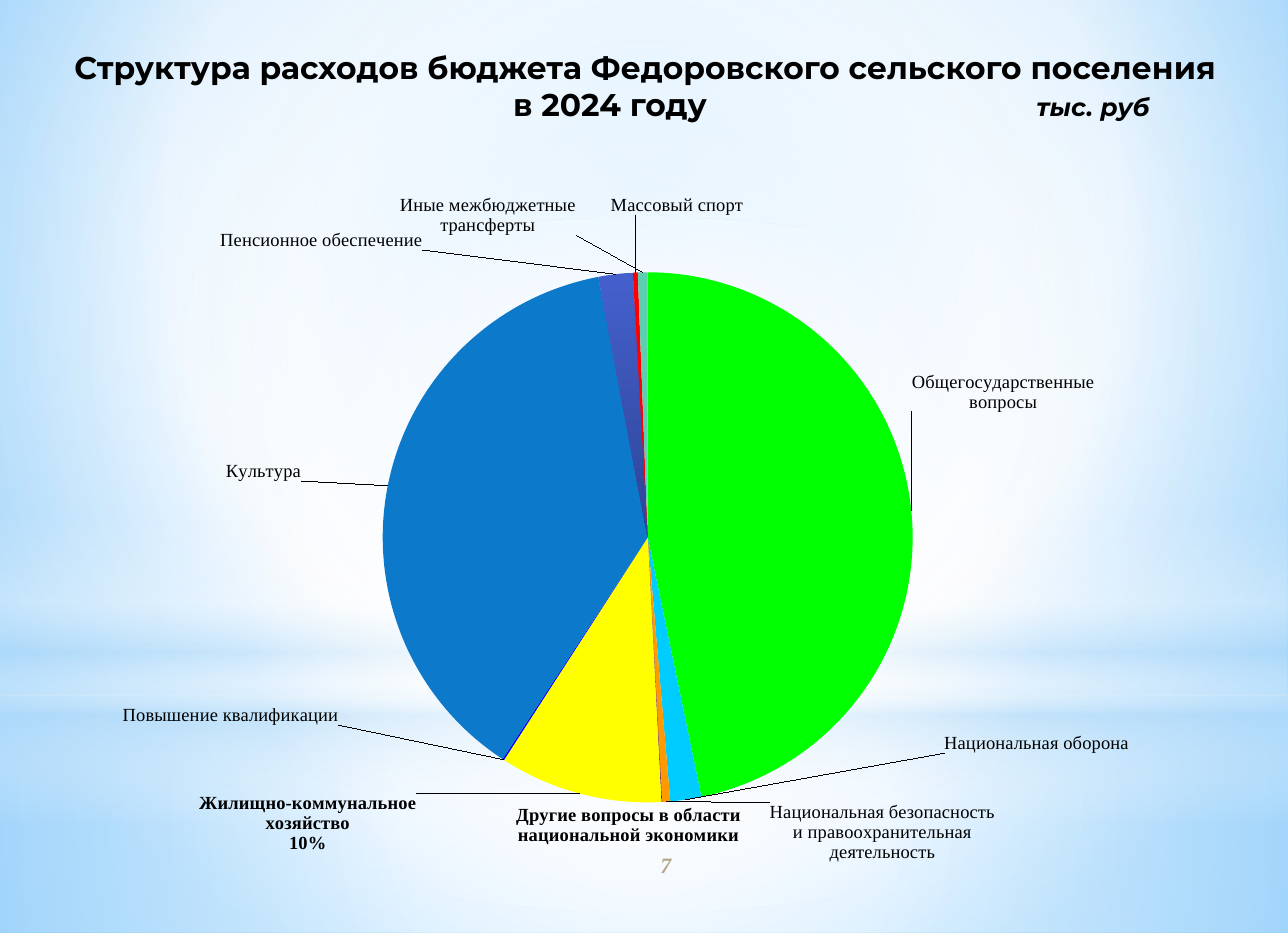
from dataclasses import dataclass
from math import cos, pi, sin
from lxml.etree import SubElement
from pptx import Presentation
from pptx.chart.data import CategoryChartData
from pptx.dml.color import RGBColor
from pptx.enum.chart import XL_CHART_TYPE
from pptx.enum.shapes import MSO_SHAPE
from pptx.enum.text import MSO_ANCHOR, PP_ALIGN
from pptx.oxml.ns import qn
from pptx.util import Inches, Pt


@dataclass(frozen=True)
class Theme:
    black: str = "000000"
    sand: str = "B5A788"
    white: str = "FFFFFF"
    sky: str = "B4DCFA"
    head: str = "Montserrat"
    body: str = "Times New Roman"
    title: int = 20
    unit: int = 16
    page: int = 14
    label: float = 11.8


T = Theme()
WIDE, HIGH = 11.42, 8.27
CENTER = (50, 50, 50, 50)
ROW = 2.2

ITEMS = [
    ("Общегосударственные вопросы", 47, "00FF00", (77.4, 42, 14.2, 2)),
    ("Национальная оборона", 1.9, "00CCFF", (80.4, 79, 14.3, 1)),
    ("Национальная безопасность и правоохранительная деятельность", 0.5, "FF9900",
     (68.5, 88.6, 17.5, 3)),
    ("Другие вопросы в области национальной экономики", 0.04, "660066", (48.8, 87.8, 17.5, 2)),
    ("Жилищно-коммунальное хозяйство", 10, "FFFF00", (24.1, 87.6, 16.8, 3)),
    ("Повышение квалификации", 0.1, "0000FF", (18.2, 76.1, 16.8, 1)),
    ("Культура", 38, "0D79CA", (21, 50.6, 5.8, 1)),
    ("Пенсионное обеспечение", 2.1, ("4560CC", "2D4496"), (25, 26.4, 15.8, 1)),
    ("Массовый спорт", 0.3, "FF0000", (52.6, 22.7, 10.3, 1)),
    ("Иные межбюджетные трансферты", 0.6, "5DCEAF", (37.9, 23.7, 13.7, 2)),
]
STRONG = (3, 4)
SHARED = 4


def place(box):
    x, y, w, h = box
    return [Inches(v * side / 100) for v, side in ((x, WIDE), (y, HIGH), (w, WIDE), (h, HIGH))]


def blend(root, stops, focus=None):
    grad = root.find(".//" + qn("a:gradFill"))
    for child in list(grad):
        grad.remove(child)
    row = SubElement(grad, qn("a:gsLst"))
    for pos, color, alpha in stops:
        stop = SubElement(row, qn("a:gs"), pos=str(pos * 1000))
        tint = SubElement(stop, qn("a:srgbClr"), val=color)
        if alpha < 100:
            SubElement(tint, qn("a:alpha"), val=str(alpha * 1000))
    if focus:
        way = SubElement(grad, qn("a:path"), {"path": "circle"})
        edges = {side: str(v * 1000) for side, v in zip("ltrb", focus)}
        SubElement(way, qn("a:fillToRect"), edges)
    else:
        SubElement(grad, qn("a:lin"), ang="5400000", scaled="0")


def write(para, text, size, font, color=T.black, italic=False):
    run = para.add_run()
    run.text = text
    run.font.size = Pt(size)
    run.font.name = font
    run.font.bold = True
    run.font.italic = italic
    run.font.color.rgb = RGBColor.from_string(color)


def frame(slide, box):
    text = slide.shapes.add_textbox(*place(box)).text_frame
    text.word_wrap = True
    text.margin_left = text.margin_right = Inches(0.11)
    text.margin_top = text.margin_bottom = Inches(0.06)
    return text


def backdrop(slide):
    slide.background.fill.gradient()
    blend(slide.background._cSld, [(0, "9ED5FF", 100), (60, T.white, 100), (100, "5BB9FF", 100)],
          (20, 10, 20, 60))
    rect, oval = MSO_SHAPE.RECTANGLE, MSO_SHAPE.OVAL
    layers = [
        (rect, (0, 74.5, 100, 25.5),
         [(0, T.white, 91), (37, T.white, 76), (100, T.sky, 79)], CENTER),
        (rect, (0, 0, 100, 74.5),
         [(0, T.white, 89), (48, T.white, 62), (100, T.sky, 79)], CENTER),
        (rect, (0, 54.9, 100, 33.4),
         [(0, T.white, 0), (29, T.white, 30), (45, T.sky, 40), (55, T.white, 26),
          (65, T.sky, 60), (100, T.white, 0)], None),
        (oval, (0, 23.3, 100, 74.5), [(0, T.white, 100), (56, T.white, 0)], CENTER),
    ]
    for kind, box, stops, focus in layers:
        shape = slide.shapes.add_shape(kind, *place(box))
        shape.shadow.inherit = False
        shape.line.fill.background()
        shape.fill.gradient()
        blend(shape._element.spPr, stops, focus)


def heading(slide, box):
    text = frame(slide, box)
    top = text.paragraphs[0]
    top.alignment = PP_ALIGN.CENTER
    write(top, "Структура расходов бюджета Федоровского сельского поселения", T.title, T.head)
    low = text.add_paragraph()
    low.alignment = PP_ALIGN.LEFT
    tabs = SubElement(low._p.get_or_add_pPr(), qn("a:tabLst"))
    for share, kind in ((44.2, "ctr"), (77.3, "l")):
        SubElement(tabs, qn("a:tab"), pos=str(Inches(share * WIDE / 100)), algn=kind)
    write(low, "\tв 2024 году", T.title, T.head)
    write(low, "\tтыс. руб", T.unit, T.head, italic=True)


def arrange(root, spot, **parts):
    for old in root.findall(qn("c:layout")):
        root.remove(old)
    layout = SubElement(root, qn("c:layout"))
    root.insert(spot, layout)
    manual = SubElement(layout, qn("c:manualLayout"))
    for name, val in parts.items():
        SubElement(manual, qn("c:" + name), val=val if isinstance(val, str) else f"{val:.4f}")


def side(reach):
    return 0 if abs(reach) <= sin(pi / 36) else 1 if reach > 0 else -1


def shift(turn, spot, box, mid, span):
    x, y, w, rows = spot
    right, down = sin(turn), -cos(turn)
    edge_x = mid[0] + right * span / WIDE * 50 + side(right) * w / 2
    edge_y = mid[1] + down * span / HIGH * 50 + side(down) * rows * ROW / 2
    return (x - edge_x) / box[2], (y - edge_y) / box[3]


def tag(point, i, move):
    font = point.data_label.font
    font.size = Pt(T.label)
    font.name = T.body
    font.bold = i in STRONG
    font.color.rgb = RGBColor.from_string(T.black)
    label = point.data_label._get_or_add_dLbl()
    arrange(label, 1, x=move[0], y=move[1])
    label.find(qn("c:showVal")).set("val", "0")
    label.find(qn("c:showCatName")).set("val", "1")
    label.find(qn("c:showPercent")).set("val", "1" if i == SHARED else "0")
    SubElement(label, qn("c:separator")).text = "\n"


def pie(slide, box, mid, span):
    data = CategoryChartData()
    data.categories = [item[0] for item in ITEMS]
    data.add_series("Series 1", [item[1] for item in ITEMS])
    chart = slide.shapes.add_chart(XL_CHART_TYPE.PIE, *place(box), data).chart
    chart.has_legend = False
    chart.has_title = False
    chart.font.size = Pt(T.label)
    chart.font.name = T.body
    chart.plots[0].vary_by_categories = True
    series = chart.plots[0].series[0]
    marks = series.data_labels
    marks.show_value = False
    marks.show_category_name = True
    lead = marks._element.find(qn("c:showLeaderLines"))
    if lead is None:
        lead = SubElement(marks._element, qn("c:showLeaderLines"))
    lead.set("val", "1")
    total, done = sum(item[1] for item in ITEMS), 0
    for i, (_, value, color, spot) in enumerate(ITEMS):
        point = series.points[i]
        point.format.line.fill.background()
        if isinstance(color, tuple):
            point.format.fill.gradient()
            blend(point.format._element, [(0, color[0], 100), (100, color[1], 100)])
        else:
            point.format.fill.solid()
            point.format.fill.fore_color.rgb = RGBColor.from_string(color)
        turn = 2 * pi * (done + value / 2) / total
        tag(point, i, shift(turn, spot, box, mid, span))
        done += value
    w, h = span / WIDE * 100 / box[2], span / HIGH * 100 / box[3]
    x, y = (mid[0] - box[0]) / box[2] - w / 2, (mid[1] - box[1]) / box[3] - h / 2
    arrange(chart._chartSpace.chart.plotArea, 0, layoutTarget="inner",
            xMode="edge", yMode="edge", x=x, y=y, w=w, h=h)


def number(slide, box):
    text = frame(slide, box)
    text.vertical_anchor = MSO_ANCHOR.MIDDLE
    para = text.paragraphs[0]
    para.alignment = PP_ALIGN.CENTER
    write(para, "7", T.page, T.body, T.sand, italic=True)


def main():
    deck = Presentation()
    deck.slide_width, deck.slide_height = Inches(WIDE), Inches(HIGH)
    slide = deck.slides.add_slide(deck.slide_layouts[6])
    backdrop(slide)
    number(slide, (41.7, 90, 20, 5.3))
    pie(slide, (5.7, 15.6, 92.6, 79.8), (50.3, 57.6), 4.7)
    heading(slide, (2.2, 4.4, 95.8, 9.6))
    deck.save("out.pptx")


if __name__ == "__main__":
    main()
